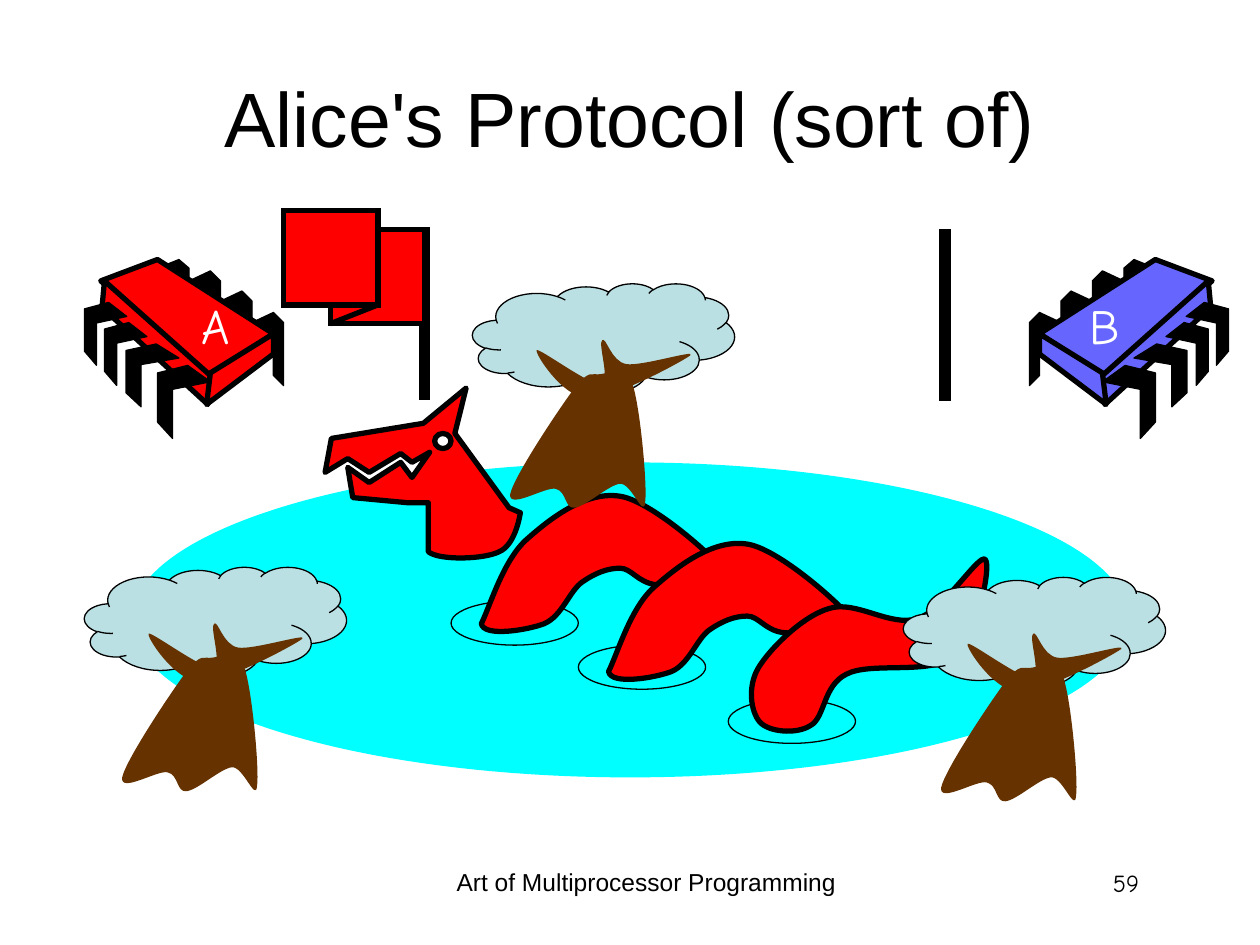
import pptx
import pptx.util
import pptx.dml.color
import pptx.enum.shapes
import pptx.enum.text
import pptx.oxml.ns

COLORS = {"black": "000000", "white": "FFFFFF", "red": "FF0000", "blue": "6666FF",
          "water": "00FFFF", "leaf": "BBE0E3", "bark": "663300"}
Inches = pptx.util.Inches
SHAPE = pptx.enum.shapes.MSO_SHAPE
ALIGN = pptx.enum.text.PP_ALIGN
ANCHOR = pptx.enum.text.MSO_ANCHOR

# Outlines in inches from their own corner: a pair is a line, six numbers a Bezier curve
BACK_LEG = [(0, .08), (.17, 0), (.25, .08), (.25, .58), (.17, .5), (.17, .17), (0, .25)]
FRONT_LEG = [(.24, 0), (.42, .13), (.12, .19), (.12, .58), (0, .45), (0, .06)]
CHIP_FACES = [
    [(.58, 0), (1.5, .59), (.98, .93), (.13, .17)],
    [(.16, .17), (1, .92), (.98, 1.15), (.14, .38)],
    [(1.5, .59), (1.5, .75), (.97, 1.15), (1, .9)],
]
HUMP = [(0, 1.06), (.02, 1.17, .37, 1.11, .5, 1.06), (.64, 1, .7, .8, .8, .73),
        (.9, .66, 1, .62, 1.1, .62), (1.19, .62, 1.24, .73, 1.38, .75),
        (1.53, .76, 2.02, .83, 1.98, .71), (1.93, .6, 1.38, .1, 1.11, .05),
        (.83, 0, .54, .23, .35, .4), (.17, .57, .07, .92, 0, 1.06)]
HEAD = [(1.46, .95), (1.03, .36), (1.12, 0), (.78, .28), (.05, .4), (0, .67), (.18, .56),
        (.35, .67), (.6, .52), (.69, .59), (.83, .51), (.69, .71), (.6, .59), (.35, .75),
        (.18, .63), (.22, .87), (.65, .91), (.82, .91), (.82, 1.3),
        (.91, 1.37, 1.26, 1.36, 1.38, 1.3), (1.5, 1.25, 1.54, 1.05, 1.55, .99)]
TAIL = [(1.89, .05), (1.84, 0, 1.56, .46, 1.35, .52), (1.14, .59, .86, .37, .65, .44),
        (.44, .5, .18, .76, .09, .91), (0, 1.06, .03, 1.26, .1, 1.34),
        (.17, 1.42, .39, 1.44, .5, 1.37), (.62, 1.31, .6, 1.05, .79, .96),
        (.98, .86, 1.46, .97, 1.64, .82), (1.83, .66, 1.94, .1, 1.89, .05)]
TRUNK = [(.81, .83), (.93, .68, .94, .73, 1.02, .72), (1.09, .71, 1.21, .63, 1.27, .8),
         (1.33, .97, 1.39, 1.61, 1.37, 1.74), (1.36, 1.87, 1.26, 1.58, 1.17, 1.59),
         (1.08, 1.6, .9, 1.77, .81, 1.78), (.73, 1.79, .75, 1.65, .66, 1.63),
         (.58, 1.61, .28, 1.8, .3, 1.67), (.33, 1.53, .69, .99, .81, .83)]
BRANCHES = [(.51, .53), (.49, .55, .71, .9, .91, .91), (1.12, .92, 1.68, .61, 1.73, .57),
            (1.78, .52, 1.34, .66, 1.22, .64), (1.1, .62, 1.06, .42, 1.03, .45),
            (.99, .47, 1.1, .78, 1.02, .8), (.93, .81, .53, .51, .51, .53)]


def rgb(name):
    return pptx.dml.color.RGBColor.from_string(COLORS[name])


def add_element(parent, tag, **attributes):
    element = parent.makeelement(pptx.oxml.ns.qn(tag), attributes)
    parent.append(element)
    return element


def paint(shape, fill=None, line=None, miter=False):
    shape.shadow.inherit = False
    if fill:
        shape.fill.solid()
        shape.fill.fore_color.rgb = rgb(fill)
    else:
        shape.fill.background()
    if line:
        shape.line.color.rgb = rgb("black")
        shape.line.width = pptx.util.Pt(line)
        if miter:
            stroke = shape._element.spPr.find(pptx.oxml.ns.qn("a:ln"))
            add_element(stroke, "a:miter", lim="800000")
    else:
        shape.line.fill.background()
    return shape


def add_preset(page, kind, left, top, width, height, **look):
    shape = page.shapes.add_shape(kind, Inches(left), Inches(top), Inches(width), Inches(height))
    return paint(shape, **look)


def bend(shape, outline):
    """Merge each three line steps that stand for a Bezier curve into one curve."""
    track = next(shape._element.iter(pptx.oxml.ns.qn("a:path")))
    steps = iter(track.findall(pptx.oxml.ns.qn("a:lnTo")))
    for part in outline[1:]:
        step = next(steps)
        if len(part) == 6:
            curve = track.makeelement(pptx.oxml.ns.qn("a:cubicBezTo"))
            track.replace(step, curve)
            curve.append(step[0])
            for _ in range(2):
                step = next(steps)
                track.remove(step)
                curve.append(step[0])


def add_outline(page, left, top, outline, mirror_width=None, **look):
    points = []
    for part in outline:
        for x, y in zip(part[::2], part[1::2]):
            x = x if mirror_width is None else mirror_width - x
            points.append((Inches(left + x), Inches(top + y)))
    builder = page.shapes.build_freeform(*points[0])
    builder.add_line_segments(points[1:], close=True)
    shape = builder.convert_to_shape()
    bend(shape, outline)
    paint(shape, **look)


def add_text(page, text, left, top, width, height, size=14, font="Arial", color="black",
             align=ALIGN.CENTER, anchor=ANCHOR.TOP, wrap=True):
    box = page.shapes.add_textbox(Inches(left), Inches(top), Inches(width), Inches(height))
    box.text_frame.word_wrap = wrap
    box.text_frame.vertical_anchor = anchor
    para = box.text_frame.paragraphs[0]
    para.alignment = align
    span = para.add_run()
    span.text = text
    span.font.size = pptx.util.Pt(size)
    span.font.name = font
    span.font.color.rgb = rgb(color)


def add_chip(page, left, top, letter, color, label_left, label_width, mirror=False):
    mirror_width = 1.5 if mirror else None

    def add_part(x, y, outline, scale_x=1, scale_y=1, **look):
        placed = [(x + scale_x * px, y + scale_y * py) for px, py in outline]
        add_outline(page, left, top, placed, mirror_width, **look)

    # Legs behind, body, legs in front
    for x, y, scale_y in ((1.33, .42, 1), (1.08, .25, 1), (.83, .09, 1), (.58, 0, .86)):
        add_part(x, y, BACK_LEG, 1, scale_y, fill="black", line=.75)
    for face in CHIP_FACES:
        add_part(0, 0, face, fill=color, line=3)
    for x, y, scale_x, scale_y in ((.58, .84, 1, 1), (.33, .67, 1, .86),
                                   (.16, .5, .8, .86), (0, .34, .8, .86)):
        add_part(x, y, FRONT_LEG, scale_x, scale_y, fill="black", line=.75)
    add_text(page, letter, left + label_left, top + .24, label_width, .57, size=28,
             font="Comic Neue", color="white", align=ALIGN.RIGHT, wrap=False)


def add_monster(page, left, top):
    for x, y in ((2.01, 2.04), (3.2, 2.47), (1, 1.69)):
        add_preset(page, SHAPE.OVAL, left + x, top + y, 1.01, .35, line=.75)
    for x, y, outline in ((1.24, .81, HUMP), (2.25, 1.19, HUMP), (0, 0, HEAD),
                          (3.35, 1.31, TAIL)):
        add_outline(page, left + x, top + y, outline, fill="red", line=3)
    add_preset(page, SHAPE.OVAL, left + .87, top + .36, .13, .12, fill="white", line=3)


def add_tree(page, left, top):
    crown = add_preset(page, SHAPE.CLOUD_CALLOUT, left, top, 2.08, .87, fill="leaf", line=.75)
    crown.adjustments[0] = .018
    crown.adjustments[1] = .493
    for outline in (TRUNK, BRANCHES):
        add_outline(page, left, top, outline, fill="bark")


def add_pole(page, left, top):
    add_preset(page, SHAPE.RECTANGLE, left, top, .06, 1.34, fill="black", line=2.25, miter=True)


def add_flag(page, left, top):
    cloth = {"fill": "red", "line": 3, "miter": True}
    add_pole(page, left + 1.09, top + .15)
    add_preset(page, SHAPE.RECTANGLE, left + .37, top + .15, .75, .75, **cloth)
    fold = page.shapes.add_connector(
        pptx.enum.shapes.MSO_CONNECTOR.STRAIGHT, Inches(left + .37), Inches(top + .9),
        Inches(left + .75), Inches(top + .75))
    fold.line.color.rgb = rgb("black")
    fold.line.width = pptx.util.Pt(3)
    add_element(fold._element.spPr, "a:effectLst")
    add_preset(page, SHAPE.RECTANGLE, left, top, .75, .75, **cloth)


def main():
    deck = pptx.Presentation()
    deck.slide_width, deck.slide_height = Inches(10), Inches(7.5)
    page = deck.slides.add_slide(deck.slide_layouts[6])

    # Title and the two computers
    add_text(page, "Alice's Protocol (sort of)", .5, .3, 9, 1.25, size=44, anchor=ANCHOR.MIDDLE)
    add_chip(page, .67, 2.06, "A", "red", .76, .49)
    add_chip(page, 8.25, 2.06, "B", "blue", .29, .45, mirror=True)

    # Lake scene
    add_preset(page, SHAPE.OVAL, 1.04, 3.67, 7.92, 2.5, fill="water")
    add_monster(page, 2.58, 3.08)
    for left, top in ((3.75, 2.25), (7.17, 4.58), (.67, 4.5)):
        add_tree(page, left, top)

    # Raised flag and bare pole
    add_flag(page, 2.25, 1.67)
    add_pole(page, 7.47, 1.83)

    # Footer
    add_text(page, "Art of Multiprocessor Programming", 3.42, 6.83, 3.42, .52)
    add_text(page, "59", 7.06, 6.84, 2.08, .5, font="Comic Neue", align=ALIGN.RIGHT)
    deck.save("out.pptx")


if __name__ == "__main__":
    main()
